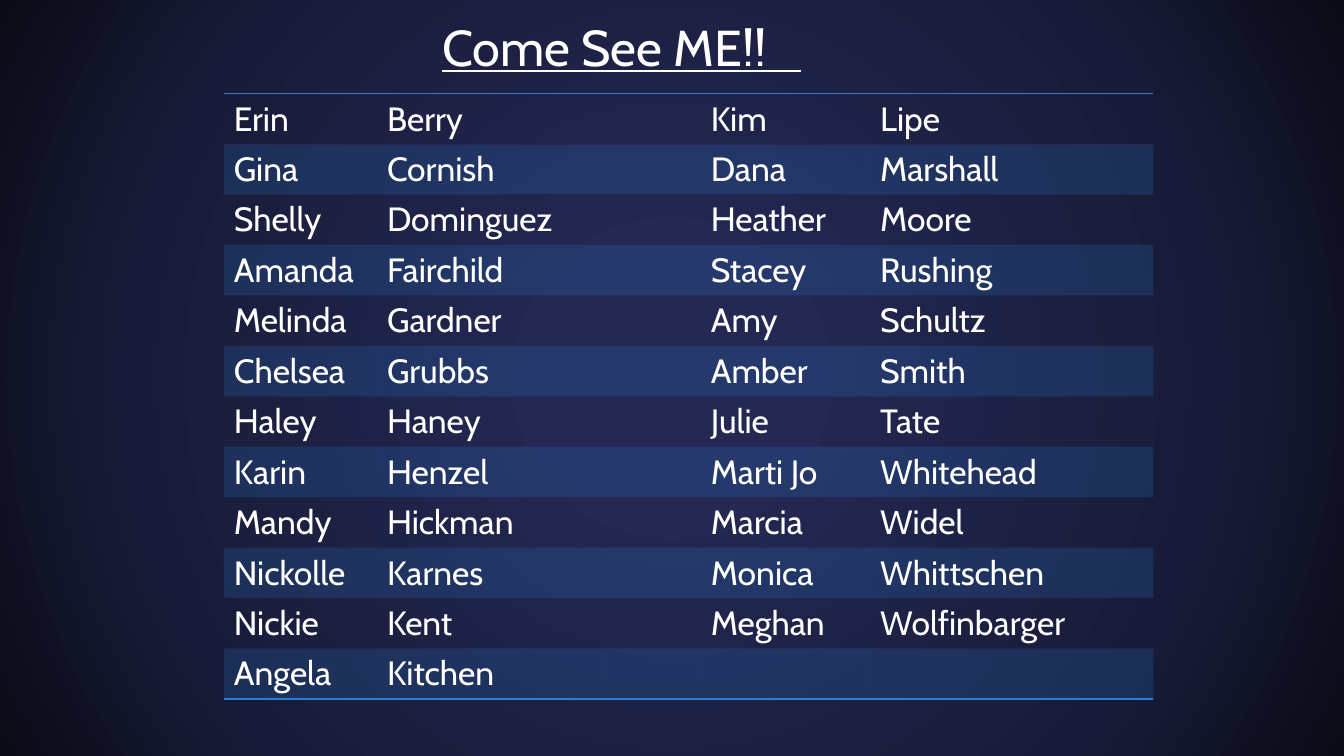
import dataclasses

import pptx
import pptx.dml.color
import pptx.enum.text
import pptx.oxml
import pptx.oxml.ns
import pptx.util

Cm = pptx.util.Cm


@dataclasses.dataclass(frozen=True)
class Theme:
    font: str = "Cabin"
    title_size: int = 36
    cell_size: int = 24
    text: str = "FFFFFF"
    accent: str = "297FD5"
    inner_line: str = "242852"
    band_opacity: int = 20
    backdrop: tuple = ((17, "242852"), (71, "181B37"), (100, "0A0B16"))


# First and last names, left pair and right pair, with a gap column between
NAMES = [
    ("Erin", "Berry", "", "Kim", "Lipe"),
    ("Gina", "Cornish", "", "Dana", "Marshall"),
    ("Shelly", "Dominguez", "", "Heather", "Moore"),
    ("Amanda", "Fairchild", "", "Stacey", "Rushing"),
    ("Melinda", "Gardner", "", "Amy", "Schultz"),
    ("Chelsea", "Grubbs", "", "Amber", "Smith"),
    ("Haley", "Haney", "", "Julie", "Tate"),
    ("Karin", "Henzel", "", "Marti Jo", "Whitehead"),
    ("Mandy", "Hickman", "", "Marcia", "Widel"),
    ("Nickolle", "Karnes", "", "Monica", "Whittschen"),
    ("Nickie", "Kent", "", "Meghan", "Wolfinbarger"),
    ("Angela", "Kitchen", "", "", ""),
]
COLUMN_WIDTHS = (3.86, 5.72, 2.44, 4.27, 7.14)
ROW_HEIGHT = 1.14
PLAIN_TABLE_STYLE = "{2D5ABB26-0587-4C30-8999-92F81FD0307C}"


def write_text(frame, text, *, font, size, color, underline=None, align=None, spacing=None):
    para = frame.paragraphs[0]
    para.alignment = align
    para.line_spacing = spacing
    span = para.add_run()
    span.text = text
    span.font.name = font
    span.font.size = pptx.util.Pt(size)
    span.font.underline = underline
    span.font.color.rgb = pptx.dml.color.RGBColor.from_string(color)


class SlideBuilder:
    def __init__(self, page, theme):
        self.page = page
        self.theme = theme

    def backdrop(self):
        self.page.background.fill.gradient()
        default = self.page.element.xpath(".//p:bgPr/a:gradFill")[0]
        stops = "".join(
            f'<a:gs pos="{place * 1000}"><a:srgbClr val="{color}"/></a:gs>'
            for place, color in self.theme.backdrop
        )
        radial = pptx.oxml.parse_xml(
            f'<a:gradFill {pptx.oxml.ns.nsdecls("a")} rotWithShape="1"><a:gsLst>{stops}</a:gsLst>'
            '<a:path path="circle"><a:fillToRect l="50000" t="50000" r="50000" b="50000"/></a:path>'
            "</a:gradFill>"
        )
        default.getparent().replace(default, radial)

    def title(self, text, left, top, width, height):
        box = self.page.shapes.title
        box.left, box.top, box.width, box.height = Cm(left), Cm(top), Cm(width), Cm(height)
        frame = box.text_frame
        frame.word_wrap = True
        frame.auto_size = pptx.enum.text.MSO_AUTO_SIZE.SHAPE_TO_FIT_TEXT
        write_text(frame, text, font=self.theme.font, size=self.theme.title_size,
                   color=self.theme.text, underline=True,
                   align=pptx.enum.text.PP_ALIGN.CENTER, spacing=0.9)

    def border(self, cell, side, color):
        cell.fill.background()
        line = pptx.oxml.parse_xml(
            f'<a:ln{side} {pptx.oxml.ns.nsdecls("a")} w="12700"><a:solidFill>'
            f'<a:srgbClr val="{color}"/></a:solidFill></a:ln{side}>'
        )
        cell.fill  # the line belongs just before the cell's fill
        cell_fill = cell._tc.tcPr.xpath("./a:noFill")[0]
        cell_fill.addprevious(line)

    def band(self, cell):
        cell.fill.solid()
        cell.fill.fore_color.rgb = pptx.dml.color.RGBColor.from_string(self.theme.accent)
        color = cell._tc.tcPr.xpath("./a:solidFill/a:srgbClr")[0]
        color.append(pptx.oxml.parse_xml(
            f'<a:alpha {pptx.oxml.ns.nsdecls("a")} val="{self.theme.band_opacity * 1000}"/>'
        ))

    def name_table(self, rows, widths, left, top, row_height):
        holder = self.page.shapes.add_table(
            len(rows), len(widths), Cm(left), Cm(top), Cm(sum(widths)), Cm(row_height * len(rows))
        )
        table = holder.table
        table.first_row = table.horz_banding = False
        holder.element.xpath(".//a:tableStyleId")[0].text = PLAIN_TABLE_STYLE
        for column, width in zip(table.columns, widths):
            column.width = Cm(width)

        # Lines above and below the first row, and below the last
        accent, inner = self.theme.accent, self.theme.inner_line
        borders = {
            0: (("T", accent), ("B", inner)),
            1: (("T", inner),),
            len(rows) - 1: (("B", accent),),
        }
        for row_index, names in enumerate(rows):
            for column_index, name in enumerate(names):
                cell = table.cell(row_index, column_index)
                if name:
                    write_text(cell.text_frame, name, font=self.theme.font,
                               size=self.theme.cell_size, color=self.theme.text)
                for side, color in borders.get(row_index, ()):
                    self.border(cell, side, color)
                if row_index % 2:
                    self.band(cell)
                else:
                    cell.fill.background()


def main():
    deck = pptx.Presentation()
    deck.slide_width, deck.slide_height = Cm(33.87), Cm(19.05)
    page = deck.slides.add_slide(deck.slide_layouts[5])
    builder = SlideBuilder(page, Theme())

    builder.backdrop()
    # The underline runs on past the last word
    builder.title("Come See ME!!   ", 5.08, 0.43, 21.16, 1.65)
    builder.name_table(NAMES, COLUMN_WIDTHS, 5.64, 2.36, ROW_HEIGHT)

    deck.save("out.pptx")


if __name__ == "__main__":
    main()
